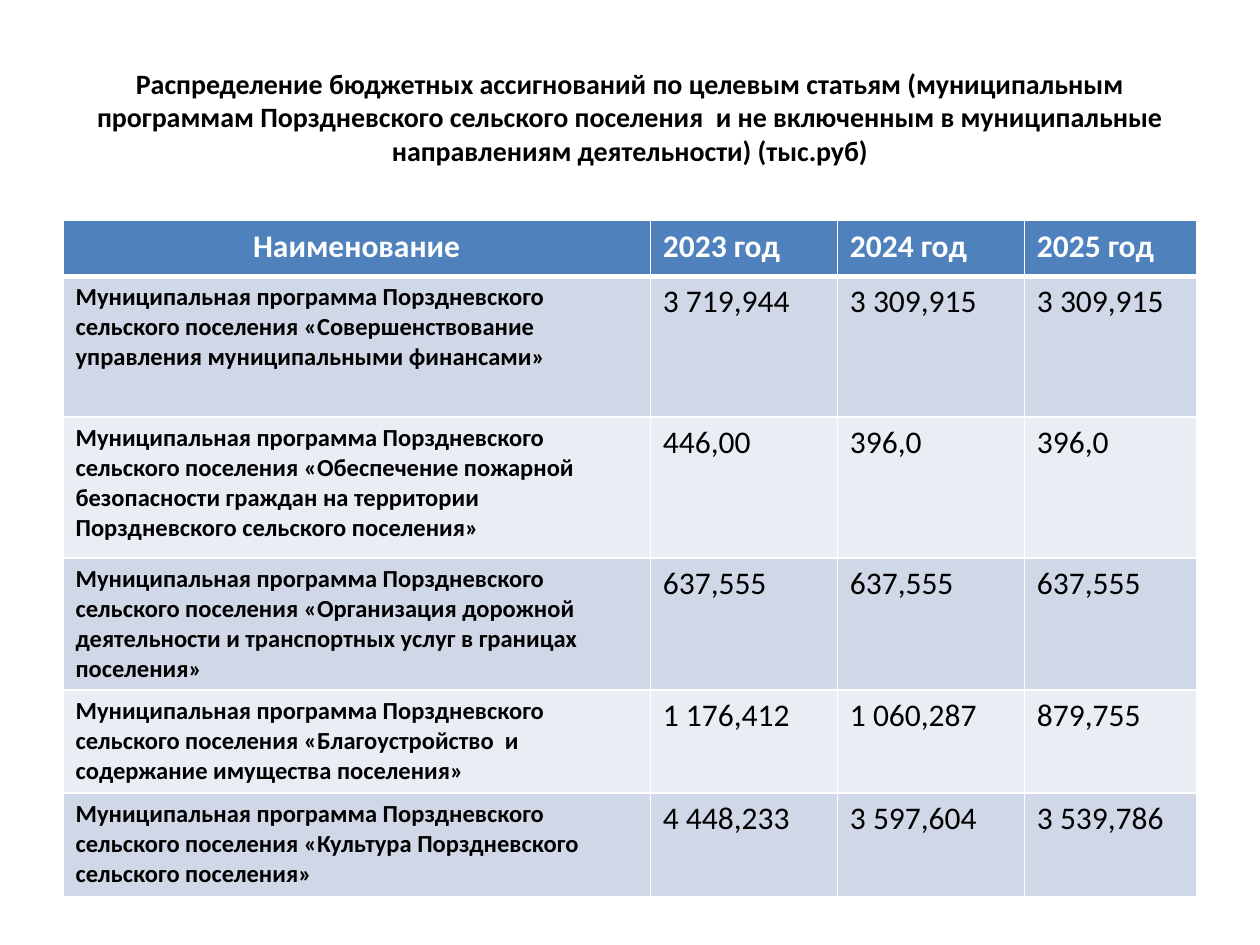
from dataclasses import dataclass

from lxml import etree
from pptx import Presentation
from pptx.dml.color import RGBColor
from pptx.enum.text import MSO_ANCHOR, PP_ALIGN
from pptx.oxml.ns import qn
from pptx.table import _Cell
from pptx.text.text import _Paragraph
from pptx.util import Cm, Pt

LEFT, MID = PP_ALIGN.LEFT, PP_ALIGN.CENTER
CENTER = MSO_ANCHOR.MIDDLE

BLACK, WHITE, BLUE = "000000", "FFFFFF", "4F81BD"
BANDS = ("D0D8E8", "E9EDF4")
WIDTHS = (11.84, 3.77, 3.77, 3.48)
PREFIX = "Муниципальная программа Порздневского сельского поселения "

HEAD = {"size": Pt(18), "bold": True}
NAME = {"size": Pt(14), "bold": True}
VALUE = {"size": Pt(18), "bold": False}


@dataclass
class Row:
    name: str
    sums: tuple[str, ...]
    high: float


ROWS = (
    Row("«Совершенствование управления муниципальными финансами»",
        ("3 719,944", "3 309,915", "3 309,915"), 2.84),
    Row("«Обеспечение пожарной безопасности граждан на территории "
        "Порздневского сельского поселения»",
        ("446,00", "396,0", "396,0"), 2.84),
    Row("«Организация дорожной деятельности и транспортных услуг "
        "в границах поселения»",
        ("637,555", "637,555", "637,555"), 2.66),
    Row("«Благоустройство  и содержание имущества поселения»",
        ("1 176,412", "1 060,287", "879,755"), 2.08),
    Row("«Культура Порздневского сельского поселения»",
        ("4 448,233", "3 597,604", "3 539,786"), 2.08),
)


def color(code: str) -> RGBColor:
    return RGBColor.from_string(code)


def write(para: _Paragraph, text: str, form: dict, ink: str, align=LEFT) -> None:
    para.alignment = align
    run = para.add_run()
    run.text = text
    for key, val in ({"name": "Calibri"} | form).items():
        setattr(run.font, key, val)
    run.font.color.rgb = color(ink)


def border(cell: _Cell, base: int, top: int) -> None:
    props = cell._tc.get_or_add_tcPr()
    for side, wide in (("lnL", 1), ("lnR", 1), ("lnT", top), ("lnB", base)):
        line = etree.SubElement(props, qn(f"a:{side}"), w=str(Pt(wide)))
        fill = etree.SubElement(line, qn("a:solidFill"))
        etree.SubElement(fill, qn("a:srgbClr"), val=WHITE)


def draw(cell: _Cell, text: str, form: dict, ink: str, back: str,
         align=LEFT, base: int = 1, top: int = 1) -> None:
    border(cell, base, top)
    cell.fill.solid()
    cell.fill.fore_color.rgb = color(back)
    write(cell.text_frame.paragraphs[0], text, form, ink, align)


def main() -> None:
    deck = Presentation()
    deck.slide_width, deck.slide_height = Cm(25.4), Cm(19.05)
    slide = deck.slides.add_slide(deck.slide_layouts[5])

    # Title
    title = slide.shapes.title
    place = {"left": 1.27, "top": 0.76, "width": 22.86, "height": 3.18}
    for key, val in place.items():
        setattr(title, key, Cm(val))
    title.text_frame.vertical_anchor = CENTER
    write(title.text_frame.paragraphs[0],
          "Распределение бюджетных ассигнований по целевым статьям "
          "(муниципальным программам Порздневского сельского поселения  "
          "и не включенным в муниципальные направлениям деятельности) (тыс.руб)",
          {"size": Pt(16), "bold": True}, BLACK, MID)

    # Table grid
    highs = (1.12, *(row.high for row in ROWS))
    table = slide.shapes.add_table(
        len(highs), len(WIDTHS), Cm(1.27), Cm(4.45),
        Cm(sum(WIDTHS)), Cm(sum(highs))).table
    for col, wide in zip(table.columns, WIDTHS):
        col.width = Cm(wide)
    for line, high in zip(table.rows, highs):
        line.height = Cm(high)

    # Header row
    heads = ("Наименование", *(f"{year} год" for year in range(2023, 2026)))
    for col, text in enumerate(heads):
        draw(table.cell(0, col), text, HEAD, WHITE, BLUE,
             LEFT if col else MID, base=3)

    # Programme rows
    for num, row in enumerate(ROWS, 1):
        for col, text in enumerate((PREFIX + row.name, *row.sums)):
            draw(table.cell(num, col), text, VALUE if col else NAME, BLACK,
                 BANDS[(num - 1) % 2], top=3 if num == 1 else 1)

    deck.save("out.pptx")


if __name__ == "__main__":
    main()
